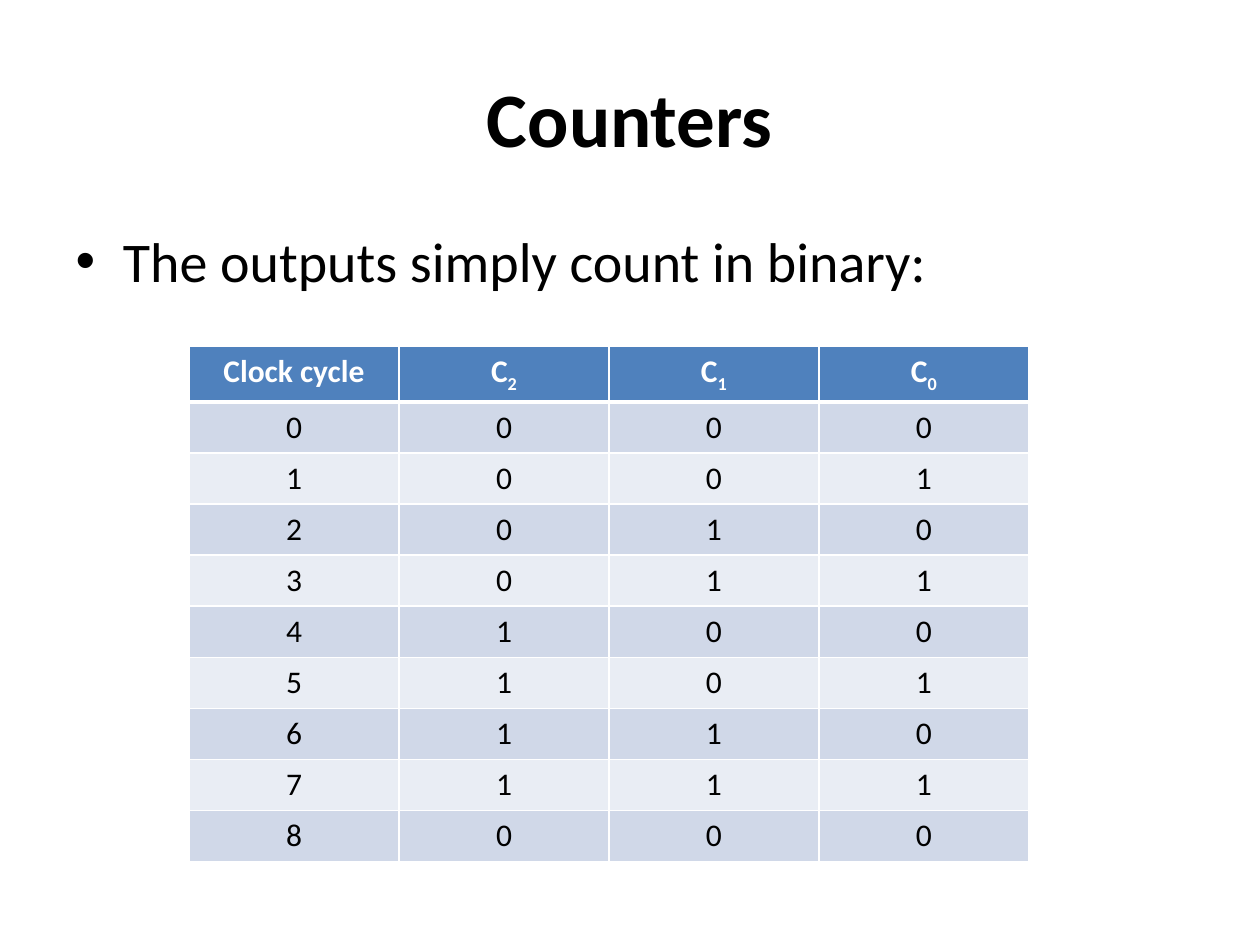
"""Build a slide showing how a three-bit counter steps through binary values."""
from lxml import etree
from pptx import Presentation
from pptx.dml.color import RGBColor
from pptx.enum.text import MSO_ANCHOR, PP_ALIGN
from pptx.oxml.ns import qn
from pptx.util import Pt

CENTER, LEFT = PP_ALIGN.CENTER, PP_ALIGN.LEFT
MIDDLE, TOP = MSO_ANCHOR.MIDDLE, MSO_ANCHOR.TOP
BLACK = RGBColor(0x00, 0x00, 0x00)
WHITE = RGBColor(0xFF, 0xFF, 0xFF)
BLUE = RGBColor(0x4F, 0x81, 0xBD)
BANDS = (RGBColor(0xD0, 0xD8, 0xE8), RGBColor(0xE9, 0xED, 0xF4))

TITLE = "Counters"
BODY = "The outputs simply count in binary:"
HEADER = [("Clock cycle", ""), ("C", "2"), ("C", "1"), ("C", "0")]
CYCLES = range(9)
BITS = (2, 1, 0)

TITLE_BOX = (36, 21.6, 648, 90)
BODY_BOX = (36, 126, 648, 356.4)
TABLE_LEFT, TABLE_TOP, COL_W, ROW_H = 108, 198, 120, 29.2

TITLE_FONT = {"name": "Calibri", "size": Pt(44), "bold": True}
BODY_FONT = {"name": "Calibri", "size": Pt(32), "bold": False}
HEADER_FONT = {"name": "Calibri", "size": Pt(18), "bold": True}
CELL_FONT = {"name": "Calibri", "size": Pt(18), "bold": False}


def add_run(p, text, font, color):
    r = p.add_run()
    r.text = text
    for key, value in font.items():
        setattr(r.font, key, value)
    r.font.color.rgb = color
    return r


def fill_placeholder(sp, text, box, font, align, anchor):
    sp.left, sp.top, sp.width, sp.height = map(Pt, box)
    tf = sp.text_frame
    tf.vertical_anchor = anchor
    p = tf.paragraphs[0]
    p.alignment = align
    add_run(p, text, font, BLACK)


def set_borders(cell, widths):
    tc_pr = cell._tc.get_or_add_tcPr()
    for side, width in widths.items():
        ln = etree.SubElement(tc_pr, qn(f"a:ln{side}"), w=str(Pt(width)))
        fill = etree.SubElement(ln, qn("a:solidFill"))
        etree.SubElement(fill, qn("a:srgbClr"), val=str(WHITE))


def fill_cell(cell, text, sub, font, color, fill, top, bottom):
    set_borders(cell, {"L": 1, "R": 1, "T": top, "B": bottom})
    cell.fill.solid()
    cell.fill.fore_color.rgb = fill
    p = cell.text_frame.paragraphs[0]
    p.alignment = CENTER
    add_run(p, text, font, color)
    if sub:
        r = add_run(p, sub, font, color)
        r.font._element.set("baseline", "-25000")


def add_count_table(s):
    rows = [[(str(n), "")] + [(str(n >> bit & 1), "") for bit in BITS] for n in CYCLES]
    n_rows, n_cols = len(rows) + 1, len(HEADER)
    box = map(Pt, (TABLE_LEFT, TABLE_TOP, COL_W * n_cols, ROW_H * n_rows))
    table = s.shapes.add_table(n_rows, n_cols, *box).table
    for col in table.columns:
        col.width = Pt(COL_W)
    for i, row in enumerate([HEADER] + rows):
        table.rows[i].height = Pt(ROW_H)
        if i == 0:
            style = (HEADER_FONT, WHITE, BLUE, 1, 3)
        else:
            style = (CELL_FONT, BLACK, BANDS[(i - 1) % 2], 3 if i == 1 else 1, 1)
        for j, (text, sub) in enumerate(row):
            fill_cell(table.cell(i, j), text, sub, *style)


def main():
    prs = Presentation()
    prs.slide_width, prs.slide_height = Pt(720), Pt(540)
    s = prs.slides.add_slide(prs.slide_layouts[1])
    title, body = s.placeholders
    fill_placeholder(title, TITLE, TITLE_BOX, TITLE_FONT, CENTER, MIDDLE)
    fill_placeholder(body, BODY, BODY_BOX, BODY_FONT, LEFT, TOP)
    add_count_table(s)
    prs.save("out.pptx")


if __name__ == "__main__":
    main()
